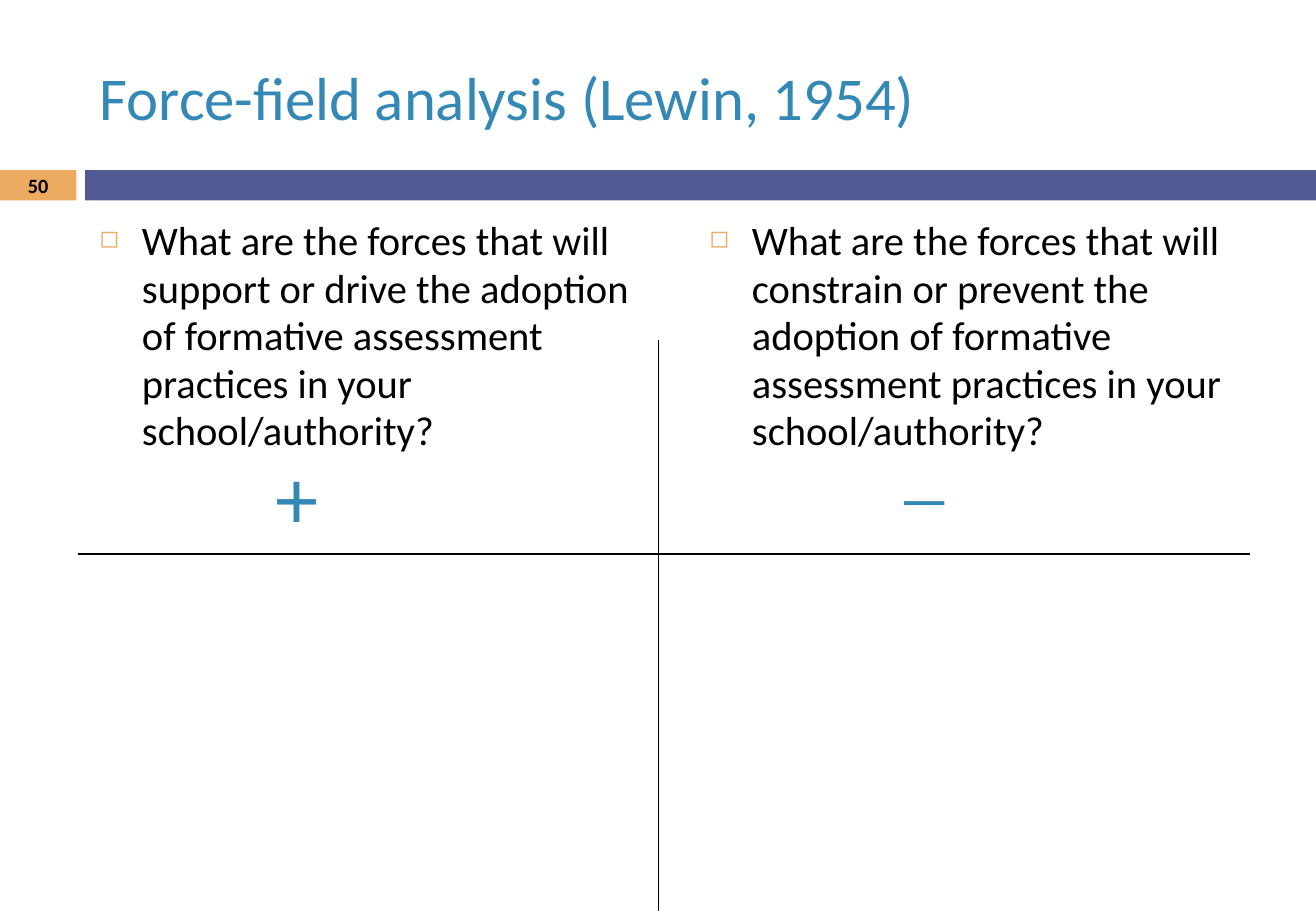
"""Build the force-field analysis slide."""
from typing import NamedTuple, Optional

from lxml.etree import SubElement
from pptx import Presentation
from pptx.dml.color import RGBColor
from pptx.enum.shapes import MSO_CONNECTOR, MSO_SHAPE
from pptx.enum.text import MSO_ANCHOR, PP_ALIGN
from pptx.oxml.ns import qn
from pptx.util import Pt

EMU_PER_PX = 9144
PAGE_WIDTH, PAGE_HEIGHT = 1083, 750
BAND_TOP, BAND_HEIGHT = 140, 25
BULLET_INDENT = 35

BLUE = RGBColor(0x34, 0x88, 0xB6)
ORANGE = RGBColor(0xED, 0xAA, 0x61)
INDIGO = RGBColor(0x52, 0x5A, 0x93)
BLACK = RGBColor(0, 0, 0)


class Area(NamedTuple):
    left: int
    top: int
    width: int
    height: int


class Band(NamedTuple):
    left: int
    width: int
    color: RGBColor


class Label(NamedTuple):
    text: str
    area: Area
    size: float
    font: str = "Calibri"
    color: RGBColor = BLACK
    bold: bool = False
    wrap: bool = True
    bullet: Optional[str] = None
    align: PP_ALIGN = PP_ALIGN.LEFT
    anchor: MSO_ANCHOR = MSO_ANCHOR.TOP


class Rule(NamedTuple):
    left: int
    top: int
    right: int
    bottom: int


BANDS = [Band(0, 63, ORANGE), Band(70, PAGE_WIDTH - 70, INDIGO)]

TITLE = Label("Force-field analysis (Lewin, 1954)", Area(72, 25, 966, 108), 36,
              color=BLUE, anchor=MSO_ANCHOR.MIDDLE)

LABELS = [
    Label("What are the forces that will support or drive the adoption of "
          "formative assessment practices in your school/authority?",
          Area(72, 174, 460, 500), 24, bullet="◻"),
    Label("What are the forces that will constrain or prevent the adoption of "
          "formative assessment practices in your school/authority?",
          Area(574, 174, 460, 500), 24, bullet="◻"),
    Label("+", Area(215, 364, 126, 90), 48, "Lato", BLUE),
    Label("—", Area(731, 374, 72, 71), 36, "Lato", BLUE, wrap=False),
    Label("50", Area(0, 139, 63, 27), 12, bold=True,
          align=PP_ALIGN.CENTER, anchor=MSO_ANCHOR.MIDDLE),
]

RULES = [Rule(64, 456, 1029, 456), Rule(542, 280, 542, PAGE_HEIGHT)]


def px(length: int) -> int:
    """Turn px into EMU."""
    return length * EMU_PER_PX


def draw_band(page, band: Band) -> None:
    """Draw one part of the band below the title."""
    shape = page.shapes.add_shape(MSO_SHAPE.RECTANGLE, px(band.left), px(BAND_TOP),
                                  px(band.width), px(BAND_HEIGHT))
    shape.shadow.inherit = False
    shape.fill.solid()
    shape.fill.fore_color.rgb = band.color
    shape.line.fill.background()


def add_bullet(para, mark: str) -> None:
    """Give a paragraph a small orange bullet and a hanging indent."""
    para.line_spacing = 0.98
    para.space_before = Pt(2)
    properties = para._p.get_or_add_pPr()
    properties.set("marL", str(px(BULLET_INDENT)))
    properties.set("indent", str(-px(BULLET_INDENT)))
    color = SubElement(properties, qn("a:buClr"))
    SubElement(color, qn("a:srgbClr"), val=str(ORANGE))
    SubElement(properties, qn("a:buSzPct"), val="60000")
    SubElement(properties, qn("a:buChar"), char=mark)


def write_label(box, label: Label) -> None:
    """Fill and format the text of a box."""
    frame = box.text_frame
    frame.word_wrap = label.wrap
    frame.vertical_anchor = label.anchor
    para = frame.paragraphs[0]
    para.alignment = label.align
    if label.bullet:
        add_bullet(para, label.bullet)
    span = para.add_run()
    span.text = label.text
    span.font.name = label.font
    span.font.size = Pt(label.size)
    span.font.bold = label.bold
    span.font.color.rgb = label.color


def draw_title(page, label: Label) -> None:
    """Place and write the title placeholder."""
    title = page.shapes.title
    title.left, title.top, title.width, title.height = map(px, label.area)
    write_label(title, label)


def draw_label(page, label: Label) -> None:
    """Add a text box with its label."""
    write_label(page.shapes.add_textbox(*map(px, label.area)), label)


def draw_rule(page, rule: Rule) -> None:
    """Draw one thin black line of the cross."""
    line = page.shapes.add_connector(MSO_CONNECTOR.STRAIGHT, *map(px, rule))
    line.line.color.rgb = BLACK
    line.line.width = Pt(1)
    SubElement(line._element.spPr, qn("a:effectLst"))


def main() -> None:
    """Build and save the deck."""
    deck = Presentation()
    deck.slide_width, deck.slide_height = px(PAGE_WIDTH), px(PAGE_HEIGHT)
    page = deck.slides.add_slide(deck.slide_layouts.get_by_name("Title Only"))
    for band in BANDS:
        draw_band(page, band)
    draw_title(page, TITLE)
    for rule in RULES:
        draw_rule(page, rule)
    for label in LABELS:
        draw_label(page, label)
    deck.save("out.pptx")


if __name__ == "__main__":
    main()
